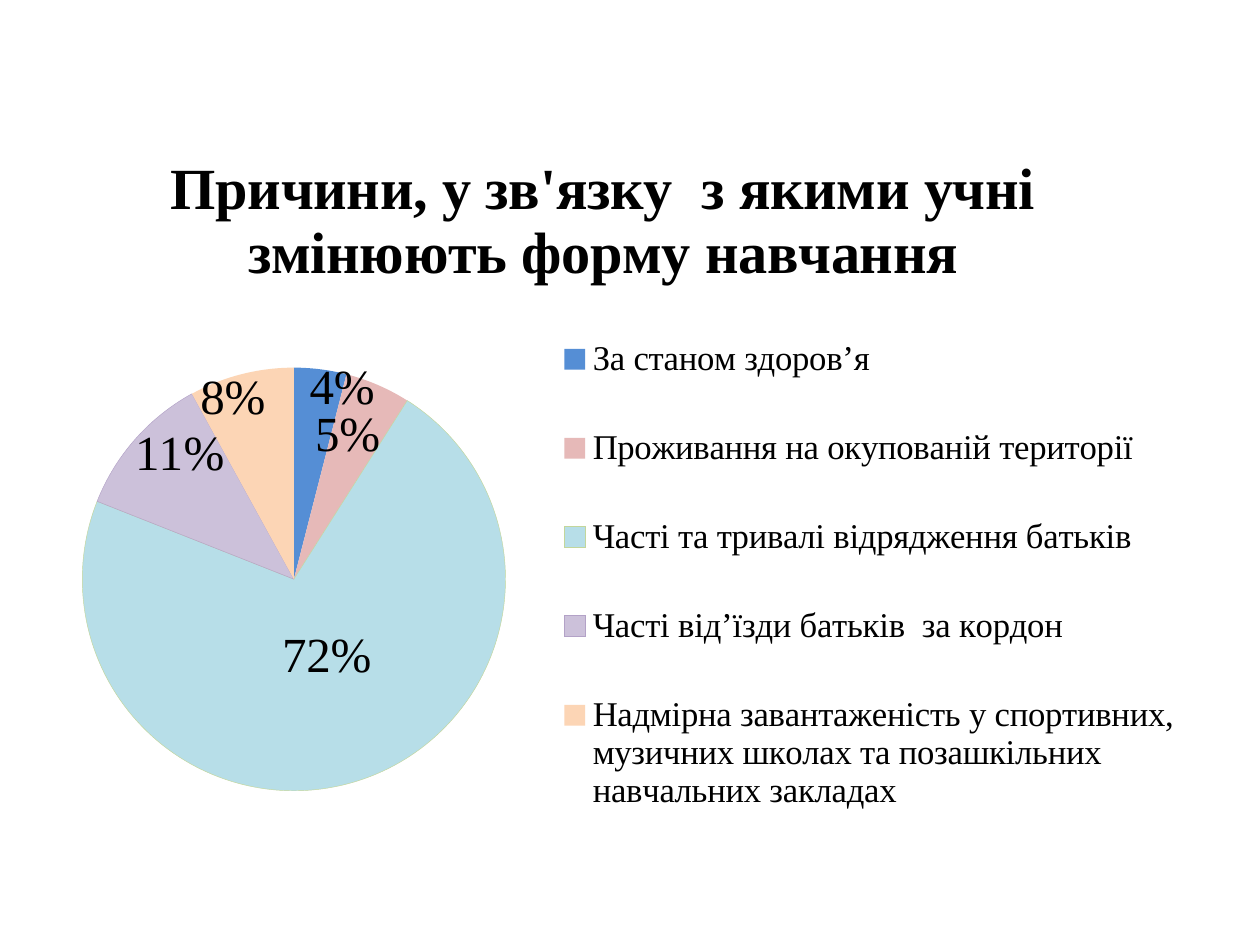
"""Build a slide with a pie chart of reasons for changing the form of study."""
from pptx import Presentation
from pptx.chart.data import CategoryChartData
from pptx.dml.color import RGBColor
from pptx.enum.chart import XL_CHART_TYPE as ChartType, XL_LABEL_POSITION as LabelPos
from pptx.enum.chart import XL_LEGEND_POSITION as LegendPos
from pptx.oxml import parse_xml
from pptx.oxml.ns import nsdecls, qn
from pptx.util import Inches, Pt

FONT = "Times New Roman"
TITLE = "Причини, у зв'язку  з якими учні змінюють форму навчання"
# category, value, fill, outline, label offset
REASONS = [
    ("За станом здоров’я", 4, "558ED5", None, (0.03, -0.11)),
    ("Проживання на окупованій території", 5, "E6B9B8", None, (0.01, -0.06)),
    ("Часті та тривалі відрядження батьків", 72, "B7DEE8", "C3D69B", (0, -0.03)),
    ("Часті від’їзди батьків  за кордон", 11, "CCC1DA", "B3A2C7", (-0.03, -0.07)),
    ("Надмірна завантаженість у спортивних, музичних школах та позашкільних "
     "навчальних закладах", 8, "FCD5B5", None, (-0.03, -0.1)),
]


def rgb(value):
    """Return the colour for a hex string."""
    return RGBColor.from_string(value)


def set_font(font, size, bold=False):
    """Apply the slide's typeface in black."""
    for name, value in {"name": FONT, "size": Pt(size), "bold": bold}.items():
        setattr(font, name, value)
    font.color.rgb = rgb("000000")


def place(part, x, y, w=None, h=None, inner=False):
    """Give a chart part a manual layout in fractions of the chart."""
    for old in part.findall(qn("c:layout")):
        part.remove(old)
    values = {"layoutTarget": "inner" if inner else None, "xMode": "edge",
              "yMode": "edge", "x": x, "y": y, "w": w, "h": h}
    body = "".join(f'<c:{k} val="{v}"/>' for k, v in values.items() if v is not None)
    layout = parse_xml(f'<c:layout {nsdecls("c")}><c:manualLayout>{body}'
                       "</c:manualLayout></c:layout>")
    overlay = part.find(qn("c:overlay"))
    (part[0] if overlay is None else overlay).addprevious(layout)


def point_label(idx, x, y):
    """Return a percent label shifted from the middle of its slice."""
    flags = "".join(f'<c:show{k} val="{int(k == "Percent")}"/>' for k in
                    ("LegendKey", "Val", "CatName", "SerName", "Percent", "BubbleSize"))
    return parse_xml(
        f'<c:dLbl {nsdecls("c")}><c:idx val="{idx}"/><c:layout><c:manualLayout>'
        f'<c:x val="{x}"/><c:y val="{y}"/></c:manualLayout></c:layout>'
        f'<c:dLblPos val="ctr"/>{flags}</c:dLbl>')


def add_pie(slide):
    """Add the pie chart and return it."""
    data = CategoryChartData()
    data.categories = [reason[0] for reason in REASONS]
    data.add_series(TITLE, [reason[1] for reason in REASONS])
    chart = slide.shapes.add_chart(ChartType.PIE, Inches(0.35), Inches(0.99),
                                   Inches(9.22), Inches(6.22), data).chart
    set_font(chart.font, 28)
    place(chart._chartSpace.chart.plotArea, 0.03, 0.31, 0.37, 0.54, inner=True)
    return chart


def style_slices(series):
    """Colour the slices and label them with percentages."""
    labels = series.data_labels
    formats = {"show_percentage": True, "show_value": False, "number_format": "0%",
               "number_format_is_linked": False, "position": LabelPos.CENTER}
    for name, value in formats.items():
        setattr(labels, name, value)
    set_font(labels.font, 28)
    for idx, (_, _, fill, outline, offset) in enumerate(REASONS):
        fmt = series.points[idx].format
        fmt.fill.solid()
        fmt.fill.fore_color.rgb = rgb(fill)
        if outline:
            fmt.line.color.rgb = rgb(outline)
            fmt.line.width = Pt(0.25)
        else:
            fmt.line.fill.background()
        labels._element.insert(idx, point_label(idx, *offset))


def add_title(chart):
    """Add the chart title."""
    chart.has_title = True
    p = chart.chart_title.text_frame.paragraphs[0]
    r = p.add_run()
    r.text = TITLE
    set_font(p.font, 33.3, bold=True)
    set_font(r.font, 33.3, bold=True)
    place(chart.chart_title._element, 0.1, 0.02)


def add_legend(chart):
    """Add the legend to the right of the pie."""
    chart.has_legend = True
    legend = chart.legend
    legend.position = LegendPos.RIGHT
    legend.include_in_layout = False
    set_font(legend.font, 19.8)
    place(legend._element, 0.43, 0.21, 0.56, 0.73)


def main():
    """Build and save the slide."""
    prs = Presentation()
    prs.slide_width, prs.slide_height = Inches(10), Inches(7.5)
    s = prs.slides.add_slide(prs.slide_layouts[6])
    chart = add_pie(s)
    style_slices(chart.plots[0].series[0])
    add_title(chart)
    add_legend(chart)
    prs.save("out.pptx")


if __name__ == "__main__":
    main()
